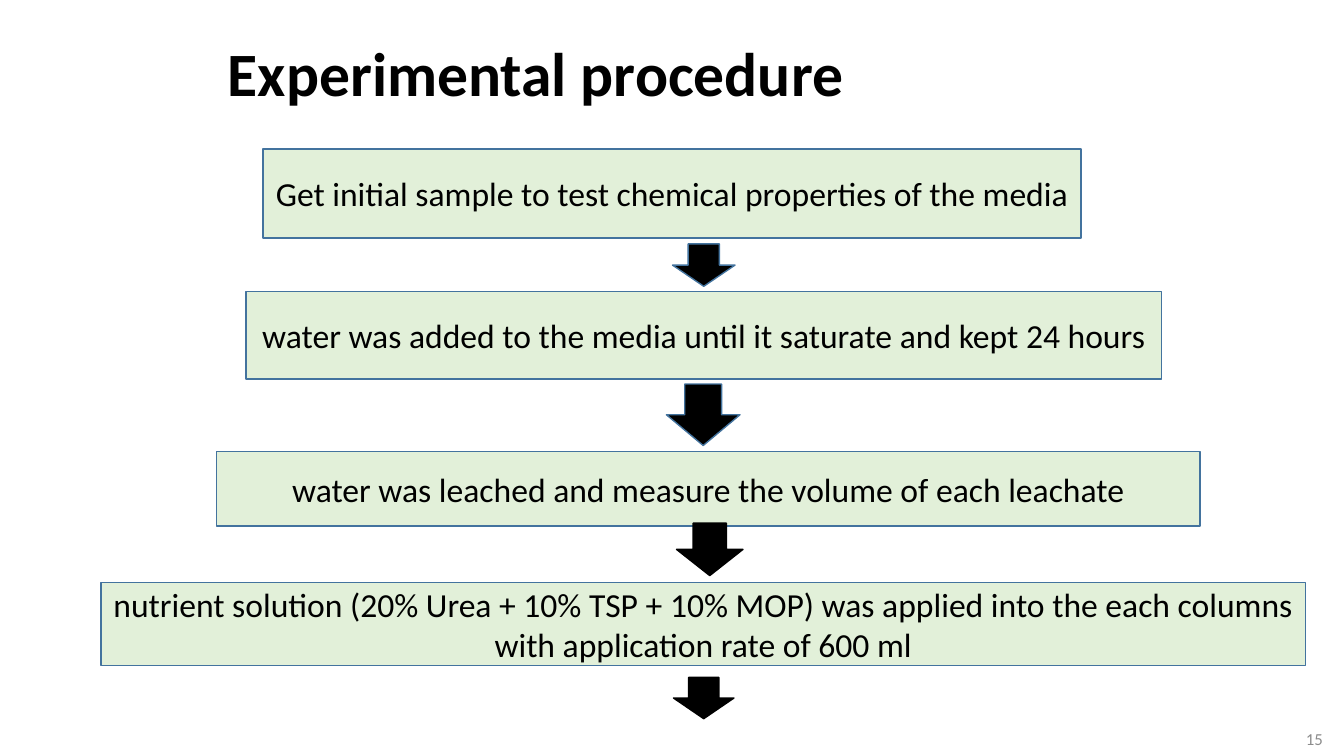
import pptx
import pptx.dml.color
import pptx.enum.shapes
import pptx.enum.text
import pptx.util

Inches = pptx.util.Inches
Shapes = pptx.enum.shapes.MSO_SHAPE
Align = pptx.enum.text.PP_ALIGN
Anchor = pptx.enum.text.MSO_ANCHOR

STEPS = [
    (Shapes.FLOWCHART_PROCESS, (2.61, 1.48, 8.11, 0.88),
     "Get initial sample to test chemical properties of the media "),
    (Shapes.RECTANGLE, (2.44, 2.89, 9.08, 0.87),
     "water was added to the media until it saturate and kept 24 hours"),
    (Shapes.FLOWCHART_PROCESS, (2.15, 4.48, 9.75, 0.74),
     "water was leached and measure the volume of each leachate"),
    (Shapes.FLOWCHART_PROCESS, (1, 5.78, 11.95, 0.82),
     "nutrient solution (20% Urea + 10% TSP + 10% MOP) was applied into "
     "the each columns with application rate of 600 ml"),
]
ARROWS = [
    ((6.67, 2.42, 0.62, 0.42), "43739E"),
    ((6.61, 3.81, 0.73, 0.61), "43739E"),
    ((6.71, 5.19, 0.66, 0.52), "000000"),
    ((6.68, 6.72, 0.6, 0.41), "000000"),
]


def colour(value):
    return pptx.dml.color.RGBColor.from_string(value)


class ProcedurePage:
    font = "Calibri"
    ink = "000000"
    step_fill = "E2F0D9"
    outline = "43739E"

    def __init__(self, deck):
        self.page = deck.slides.add_slide(deck.slide_layouts[5])

    def set_text(self, box, text, size, align, ink=ink, bold=False):
        frame = box.text_frame
        frame.text = text
        frame.word_wrap = True
        frame.auto_size = pptx.enum.text.MSO_AUTO_SIZE.NONE
        frame.vertical_anchor = Anchor.MIDDLE
        para = frame.paragraphs[0]
        para.alignment = align
        span = para.runs[0]
        span.font.name = self.font
        span.font.size = pptx.util.Pt(size)
        span.font.bold = bold
        span.font.color.rgb = colour(ink)
        return para

    def title(self, place, text):
        box = self.page.shapes.title
        box.left, box.top, box.width, box.height = map(Inches, place)
        para = self.set_text(box, text, 44, Align.LEFT, bold=True)
        para.line_spacing = 0.9

    def page_number(self, place, text):
        box = self.page.shapes.add_textbox(*map(Inches, place))
        self.set_text(box, text, 12, Align.RIGHT, ink="8C8C8C")

    def shape(self, kind, place, fill, line):
        shape = self.page.shapes.add_shape(kind, *map(Inches, place))
        shape.shadow.inherit = False
        shape.fill.solid()
        shape.fill.fore_color.rgb = colour(fill)
        shape.line.color.rgb = colour(line)
        shape.line.width = pptx.util.Pt(1)
        return shape

    def step(self, kind, place, text):
        box = self.shape(kind, place, self.step_fill, self.outline)
        self.set_text(box, text, 24, Align.CENTER)

    def arrow(self, place, line):
        self.shape(Shapes.DOWN_ARROW, place, self.ink, line)


def main():
    deck = pptx.Presentation()
    deck.slide_width = Inches(13.33)
    deck.slide_height = Inches(7.5)
    procedure = ProcedurePage(deck)
    procedure.title((2.16, 0.03, 10.25, 1.45), "Experimental procedure")
    procedure.page_number((10.22, 7.13, 3, 0.4), "15")
    for step, arrow in zip(STEPS, ARROWS):
        procedure.step(*step)
        procedure.arrow(*arrow)
    deck.save("out.pptx")


if __name__ == "__main__":
    main()
